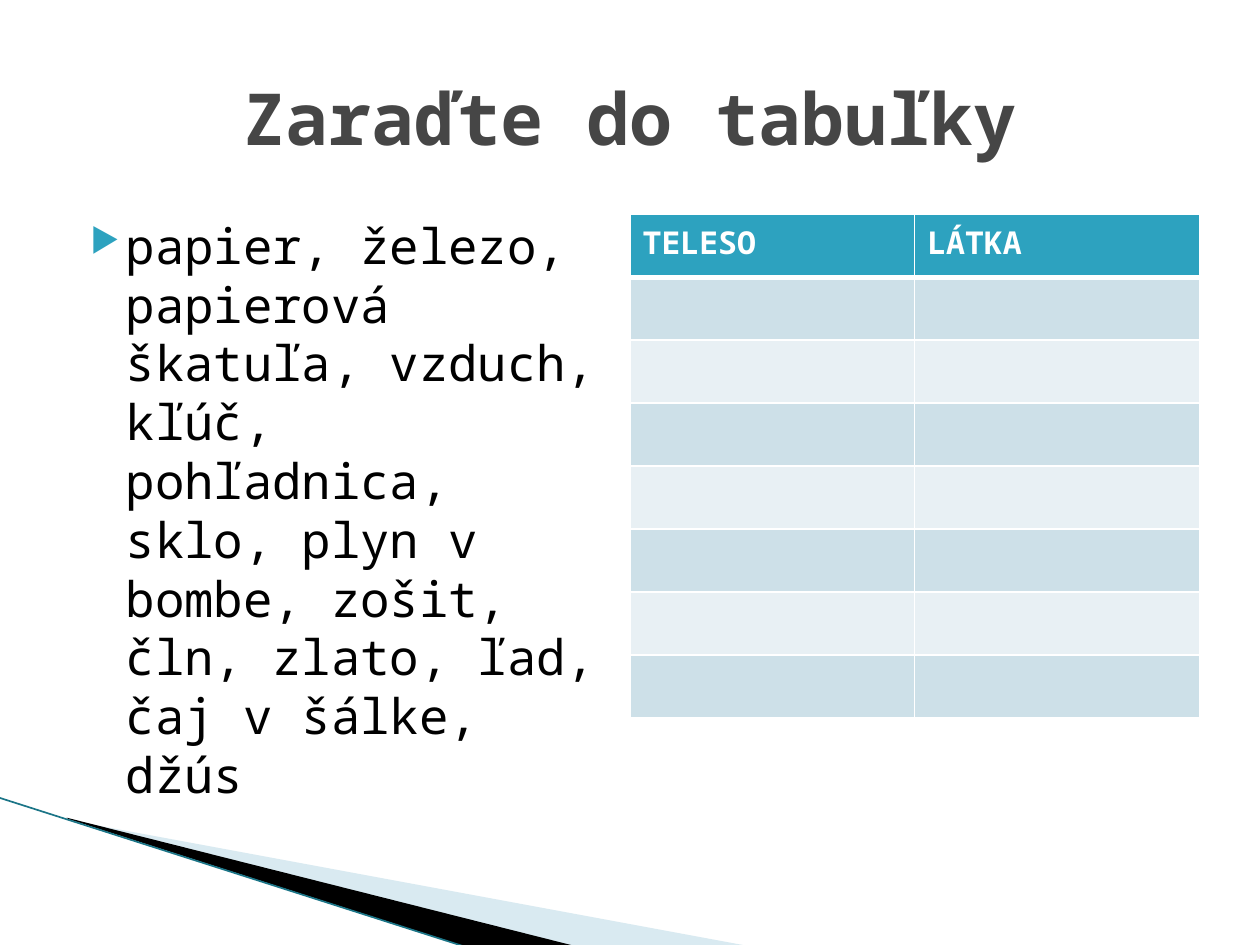
from lxml import etree
from pptx import Presentation
from pptx.dml.color import RGBColor
from pptx.enum.shapes import MSO_CONNECTOR
from pptx.enum.text import MSO_ANCHOR, PP_ALIGN
from pptx.oxml.ns import qn
from pptx.util import Inches, Pt

STRAIGHT = MSO_CONNECTOR.STRAIGHT
MIDDLE = MSO_ANCHOR.MIDDLE
CENTER = PP_ALIGN.CENTER

# Content
TITLE = "Zaraďte do tabuľky"
WORDS = ("papier, železo, papierová škatuľa, vzduch, kľúč, pohľadnica, sklo, "
         "plyn v bombe, zošit, čln, zlato, ľad, čaj v šálke, džús")
HEADINGS = ("TELESO", "LÁTKA")
EMPTY_ROWS = 7

# Look
FONT = "Noto Sans Mono"
ACCENT, WHITE = "2DA2BF", "FFFFFF"
BANDS = ("CDE0E8", "E8F0F4")
COLUMN_WIDTH, ROW_HEIGHT = 2.26, 0.5
# Corner wedges: points, colour, opacity in percent
WEDGES = (
    (((0.55, 6.51), (5.95, 7.51), (4.56, 7.51), (0.55, 6.5)), "A0CBDC", 40),
    (((0.53, 6.49), (4.57, 7.51), (3.72, 7.52), (0.54, 6.5)), "000000", 100),
)
EDGE_START, EDGE_END, EDGE_COLOR = (-0.01, 6.33), (3.71, 7.52), "1B7587"


def rgb(color):
    return RGBColor.from_string(color)


def add(parent, tag, **attributes):
    return etree.SubElement(parent, qn(tag), attributes)


def set_font(paragraph, size, color, bold=False):
    font = paragraph.font
    font.name, font.size, font.bold = FONT, Pt(size), bold
    font.color.rgb = rgb(color)


def place(shape, left, top, width, height):
    shape.left, shape.top = Inches(left), Inches(top)
    shape.width, shape.height = Inches(width), Inches(height)


def add_wedge(shapes, points, color, opacity):
    corners = [(Inches(x), Inches(y)) for x, y in points]
    builder = shapes.build_freeform(*corners[0])
    builder.add_line_segments(corners[1:], close=True)
    wedge = builder.convert_to_shape()
    wedge.shadow.inherit = False
    wedge.line.fill.background()
    wedge.fill.solid()
    wedge.fill.fore_color.rgb = rgb(color)
    if opacity < 100:
        paint = wedge.fill._xPr.find(qn("a:solidFill"))[0]
        add(paint, "a:alpha", val=str(opacity * 1000))


def add_bullet(paragraph, character, color, percent):
    properties = paragraph._p.get_or_add_pPr()
    properties.set("marL", str(Inches(0.4)))
    properties.set("indent", str(Inches(-0.28)))
    add(add(properties, "a:buClr"), "a:srgbClr", val=color)
    add(properties, "a:buSzPct", val=str(percent * 1000))
    add(properties, "a:buChar", char=character)


def format_cell(cell, color, bottom_width):
    properties = cell._tc.get_or_add_tcPr()
    for side, width in (("L", 1), ("R", 1), ("T", 1), ("B", bottom_width)):
        border = add(properties, "a:ln" + side, w=str(Pt(width)))
        add(add(border, "a:solidFill"), "a:srgbClr", val=WHITE)
    cell.fill.solid()
    cell.fill.fore_color.rgb = rgb(color)


def main():
    deck = Presentation()
    deck.slide_width, deck.slide_height = Inches(10), Inches(7.5)
    slide = deck.slides.add_slide(deck.slide_layouts[5])
    shapes = slide.shapes

    # Corner decoration
    for points, color, opacity in WEDGES:
        add_wedge(shapes, points, color, opacity)
    edge = shapes.add_connector(
        STRAIGHT, *(Inches(value) for value in EDGE_START + EDGE_END))
    edge.line.color.rgb = rgb(EDGE_COLOR)
    edge.line.width = Pt(0.95)
    add(edge._element.spPr, "a:effectLst")

    # Title
    title = shapes.title
    place(title, 0.5, 0.3, 9, 1.25)
    title.text_frame.text = TITLE
    title.text_frame.vertical_anchor = MIDDLE
    heading = title.text_frame.paragraphs[0]
    heading.alignment = CENTER
    set_font(heading, 41, "464646", bold=True)

    # Word list
    word_box = shapes.add_textbox(
        Inches(0.5), Inches(1.66), Inches(4.36), Inches(4.95))
    word_box.text_frame.word_wrap = True
    words = word_box.text_frame.paragraphs[0]
    words.text = WORDS
    words.line_spacing = Pt(33.6)
    add_bullet(words, "▶", ACCENT, 68)
    set_font(words, 28, "000000")

    # Sorting table
    row_count = EMPTY_ROWS + 1
    table = shapes.add_table(
        row_count, len(HEADINGS), Inches(5), Inches(1.7),
        Inches(COLUMN_WIDTH * len(HEADINGS)),
        Inches(ROW_HEIGHT * row_count)).table
    for column, text in enumerate(HEADINGS):
        cell = table.cell(0, column)
        cell.text = text
        set_font(cell.text_frame.paragraphs[0], 18, WHITE, bold=True)
        format_cell(cell, ACCENT, 3)
        for row in range(1, row_count):
            format_cell(table.cell(row, column), BANDS[(row - 1) % 2], 1)

    deck.save("out.pptx")


if __name__ == "__main__":
    main()
